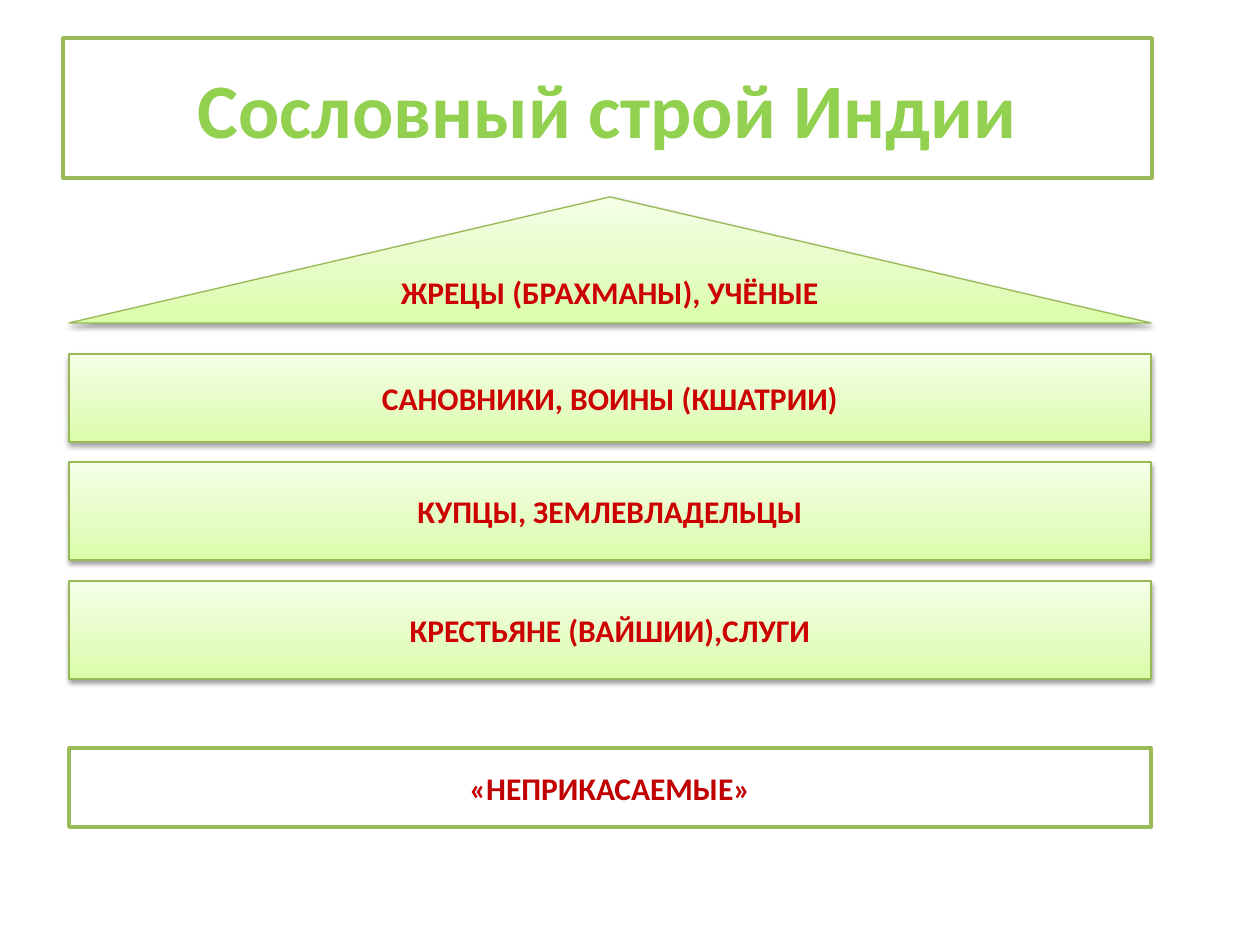
"""Build a slide showing the estates of ancient India as a stepped pyramid."""
import copy

import lxml.etree
import pptx
import pptx.dml.color
import pptx.enum.shapes
import pptx.enum.text
import pptx.oxml.ns
import pptx.util

RGB = pptx.dml.color.RGBColor
SHAPE = pptx.enum.shapes.MSO_SHAPE
qn = pptx.oxml.ns.qn

PX = 914400 / 126
WHITE = RGB(0xFF, 0xFF, 0xFF)
TITLE_GREEN = RGB(0x92, 0xD0, 0x50)
FRAME_GREEN = RGB(0x9B, 0xBB, 0x59)
EDGE_GREEN = RGB(0x98, 0xB9, 0x55)
ESTATE_RED = RGB(0xCC, 0x00, 0x00)
OUTCAST_RED = RGB(0xC0, 0x00, 0x00)
GRADIENT = [
    (0, RGB(0xDA, 0xFD, 0xA7)),
    (0.35, RGB(0xE4, 0xFC, 0xC2)),
    (1, RGB(0xF5, 0xFF, 0xE7)),
]

TITLE = "Сословный строй Индии"
TITLE_BOX = (63, 38, 1089, 140)
LEFT, WIDTH = 69, 1082
ESTATES = [
    ("ЖРЕЦЫ (БРАХМАНЫ), УЧЁНЫЕ", SHAPE.ISOSCELES_TRIANGLE, 197, 126),
    ("САНОВНИКИ, ВОИНЫ (КШАТРИИ)", SHAPE.RECTANGLE, 354, 88),
    ("КУПЦЫ, ЗЕМЛЕВЛАДЕЛЬЦЫ", SHAPE.RECTANGLE, 462, 98),
    ("КРЕСТЬЯНЕ (ВАЙШИИ),СЛУГИ", SHAPE.RECTANGLE, 581, 98),
]
OUTCASTS = ("«НЕПРИКАСАЕМЫЕ»", SHAPE.RECTANGLE, 748, 79)


def px(length):
    return pptx.util.Emu(round(length * PX))


def write(shape, text, size, color):
    frame = shape.text_frame
    frame.word_wrap = True
    frame.vertical_anchor = pptx.enum.text.MSO_ANCHOR.MIDDLE
    paragraph = frame.paragraphs[0]
    paragraph.text = text
    paragraph.alignment = pptx.enum.text.PP_ALIGN.CENTER
    font = paragraph.font
    font.name, font.size, font.bold = "Calibri", pptx.util.Pt(size), True
    font.color.rgb = color


def outline(shape, color, width):
    shape.line.color.rgb = color
    shape.line.width = pptx.util.Pt(width)


def frame_white(shape):
    shape.fill.solid()
    shape.fill.fore_color.rgb = WHITE
    outline(shape, FRAME_GREEN, 2)


def shade(shape):
    shape.fill.gradient()
    shape.fill.gradient_angle = 90
    stop_list = shape._element.spPr.find(".//" + qn("a:gsLst"))
    stop_list.append(copy.deepcopy(stop_list[-1]))
    for stop, (position, color) in zip(shape.fill.gradient_stops, GRADIENT):
        stop.position = position
        stop.color.rgb = color


def cast_shadow(shape):
    effects = shape._element.spPr.find(qn("a:effectLst"))
    shadow = lxml.etree.SubElement(
        effects, qn("a:outerShdw"), blurRad=str(pptx.util.Pt(3.1)),
        dist=str(pptx.util.Pt(1.6)), dir="5400000", rotWithShape="0")
    black = lxml.etree.SubElement(shadow, qn("a:srgbClr"), val="000000")
    lxml.etree.SubElement(black, qn("a:alpha"), val="38000")


def add_tier(slide, text, kind, top, height, color):
    tier = slide.shapes.add_shape(kind, px(LEFT), px(top), px(WIDTH), px(height))
    tier.shadow.inherit = False
    write(tier, text, 18, color)
    return tier


def main():
    deck = pptx.Presentation()
    deck.slide_width, deck.slide_height = px(1260), px(945)
    slide = deck.slides.add_slide(deck.slide_layouts[5])

    title = slide.shapes.title
    title.left, title.top, title.width, title.height = map(px, TITLE_BOX)
    frame_white(title)
    write(title, TITLE, 44, TITLE_GREEN)

    for estate in ESTATES:
        tier = add_tier(slide, *estate, ESTATE_RED)
        shade(tier)
        outline(tier, EDGE_GREEN, 0.75)
        cast_shadow(tier)

    frame_white(add_tier(slide, *OUTCASTS, OUTCAST_RED))
    deck.save("out.pptx")


if __name__ == "__main__":
    main()
